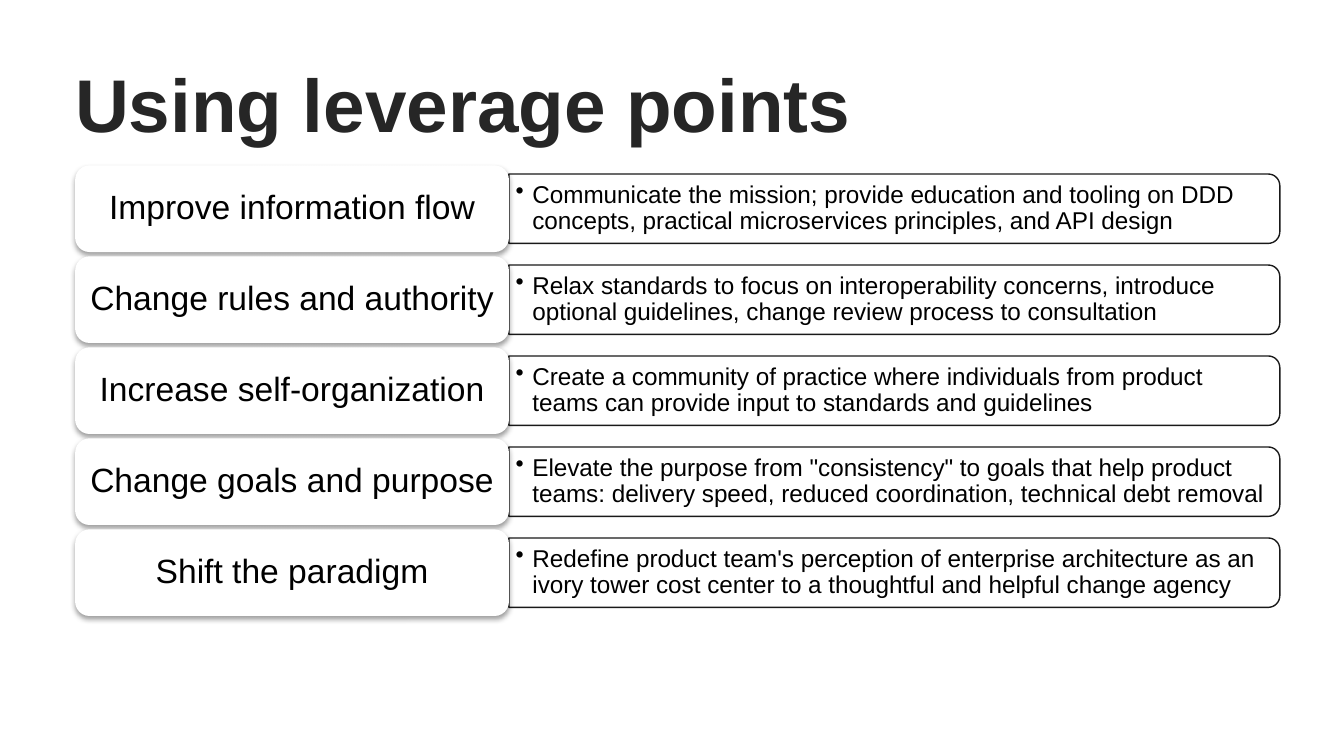
import math
from lxml import etree
from pptx import Presentation
from pptx import util as u
from pptx.dml.color import RGBColor
from pptx.enum import shapes, text
from pptx.oxml.ns import qn

BLACK = RGBColor(0x00, 0x00, 0x00)
WHITE = RGBColor(0xFF, 0xFF, 0xFF)
CHARCOAL = RGBColor(0x26, 0x26, 0x26)

LEFT, TOP, PITCH = 40.25, 88.6, 48.75
LABEL_WIDTH, LABEL_HEIGHT, LABEL_RADIUS = 232.4, 46.4, 7.7
DETAIL_WIDTH, DETAIL_HEIGHT, DETAIL_RADIUS = 413, 37.15, 6.2
DETAIL_LEFT = LEFT + LABEL_WIDTH
ARC_STEPS = 8

ROWS = [
    ("Improve information flow",
     "Communicate the mission; provide education and tooling on DDD concepts, "
     "practical microservices principles, and API design"),
    ("Change rules and authority",
     "Relax standards to focus on interoperability concerns, introduce optional "
     "guidelines, change review process to consultation"),
    ("Increase self-organization",
     "Create a community of practice where individuals from product teams can "
     "provide input to standards and guidelines"),
    ("Change goals and purpose",
     'Elevate the purpose from "consistency" to goals that help product teams: '
     "delivery speed, reduced coordination, technical debt removal"),
    ("Shift the paradigm",
     "Redefine product team's perception of enterprise architecture as an ivory "
     "tower cost center to a thoughtful and helpful change agency"),
]


def add_xml(parent, tag, **attributes):
    return etree.SubElement(parent, qn(tag), attributes)


def write(box, words, insets, align, anchor, bullet=False, **font):
    frame = box.text_frame
    frame.word_wrap = True
    frame.vertical_anchor = anchor
    for side, inset in zip(("left", "top", "right", "bottom"), insets):
        setattr(frame, f"margin_{side}", u.Pt(inset))
    para = frame.paragraphs[0]
    para.alignment = align
    para.line_spacing = 0.9
    if bullet:
        properties = para._p.get_or_add_pPr()
        properties.set("marL", str(u.Pt(9)))
        properties.set("indent", str(u.Pt(-9)))
        add_xml(properties, "a:buChar", char="•")
    span = para.add_run()
    span.text = words
    color = font.pop("color")
    for name, value in {"name": "Arial", **font}.items():
        setattr(span.font, name, value)
    span.font.color.rgb = color


deck = Presentation()
deck.slide_width, deck.slide_height = u.Pt(720), u.Pt(405)
page = deck.slides.add_slide(deck.slide_layouts[6])

# Title
title = page.shapes.add_textbox(u.Pt(LEFT), u.Pt(33.1), u.Pt(645.8), u.Pt(49.7))
write(title, "Using leverage points", (0, 3.6, 7.2, 3.6), text.PP_ALIGN.LEFT,
      text.MSO_ANCHOR.MIDDLE, size=u.Pt(40), bold=True, color=CHARCOAL)

for index, (heading, explanation) in enumerate(ROWS):
    label_top = TOP + index * PITCH
    detail_top = label_top + (LABEL_HEIGHT - DETAIL_HEIGHT) / 2
    detail_right = DETAIL_LEFT + DETAIL_WIDTH
    detail_bottom = detail_top + DETAIL_HEIGHT

    # Detail panel, rounded on its right side only
    outline = []
    for start, center_y in ((-90, detail_top + DETAIL_RADIUS),
                            (0, detail_bottom - DETAIL_RADIUS)):
        for step in range(ARC_STEPS + 1):
            angle = math.radians(start + 90 * step / ARC_STEPS)
            outline.append((
                u.Pt(detail_right - DETAIL_RADIUS * (1 - math.cos(angle))),
                u.Pt(center_y + DETAIL_RADIUS * math.sin(angle))))
    outline.append((u.Pt(DETAIL_LEFT), u.Pt(detail_bottom)))
    builder = page.shapes.build_freeform(u.Pt(DETAIL_LEFT), u.Pt(detail_top))
    builder.add_line_segments(outline, close=True)
    detail = builder.convert_to_shape()
    detail.shadow.inherit = False
    detail.fill.solid()
    detail.fill.fore_color.rgb = WHITE
    detail.line.color.rgb = BLACK
    detail.line.width = u.Pt(0.75)
    for color in detail._element.spPr.iter(qn("a:srgbClr")):
        add_xml(color, "a:alpha", val="90000")
    write(detail, explanation, (3.6, 3.6, 5.8, 3.6), text.PP_ALIGN.LEFT,
          text.MSO_ANCHOR.MIDDLE, bullet=True, size=u.Pt(13), color=BLACK)

    # Heading card with a soft shadow below
    label = page.shapes.add_shape(
        shapes.MSO_SHAPE.ROUNDED_RECTANGLE, u.Pt(LEFT), u.Pt(label_top),
        u.Pt(LABEL_WIDTH), u.Pt(LABEL_HEIGHT))
    label.adjustments[0] = LABEL_RADIUS / LABEL_HEIGHT
    label.fill.solid()
    label.fill.fore_color.rgb = WHITE
    label.line.fill.background()
    label.shadow.inherit = False
    effects = label._element.spPr.find(qn("a:effectLst"))
    shadow = add_xml(effects, "a:outerShdw", blurRad=str(u.Pt(3.1)),
                     dist=str(u.Pt(1.6)), dir="5400000", rotWithShape="0")
    add_xml(add_xml(shadow, "a:srgbClr", val=str(BLACK)), "a:alpha", val="38000")
    write(label, heading, (5.5, 3, 5.5, 3), text.PP_ALIGN.CENTER,
          text.MSO_ANCHOR.MIDDLE, size=u.Pt(18), color=BLACK)

deck.save("out.pptx")
